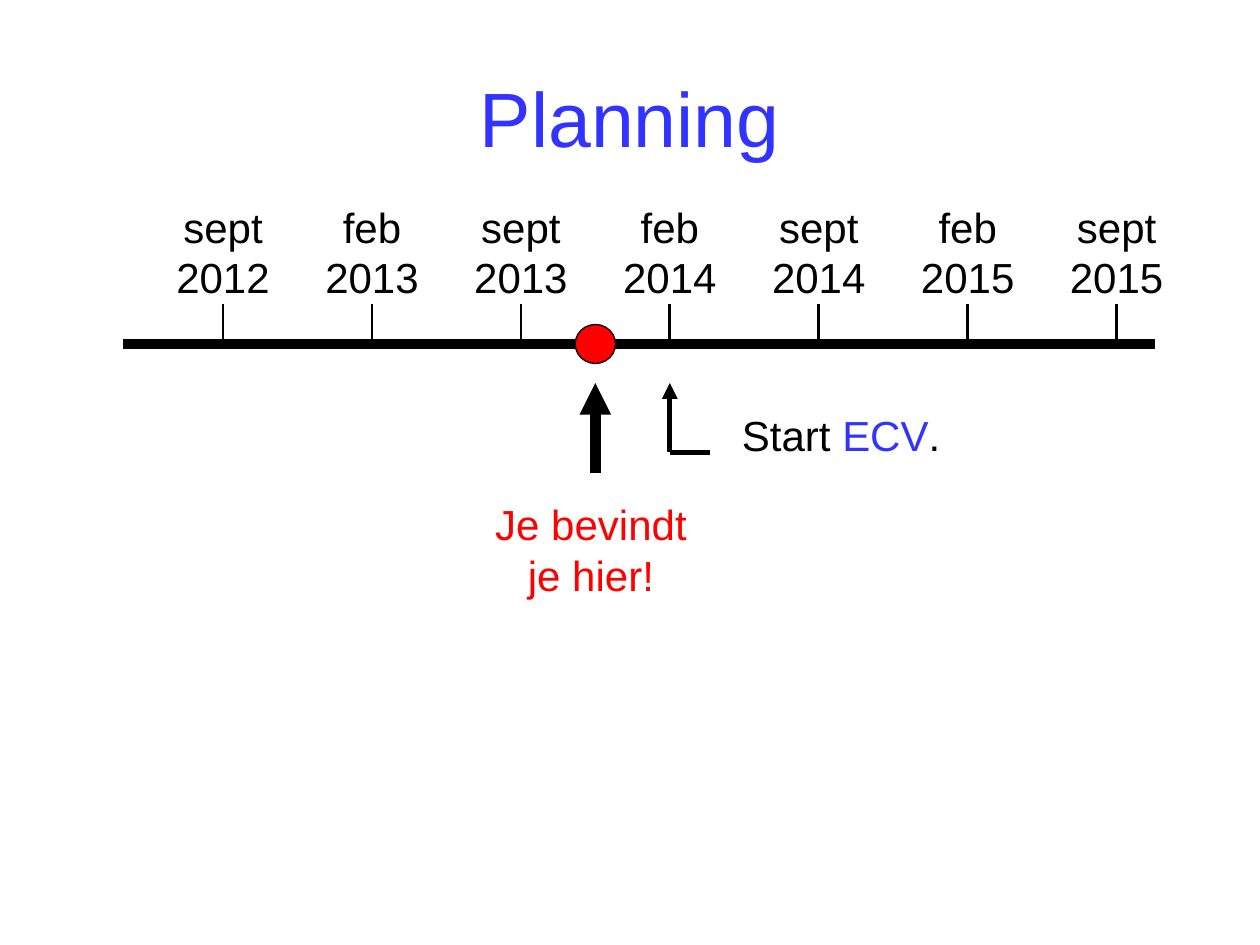
from typing import NamedTuple

from lxml.etree import SubElement
from pptx import Presentation
from pptx.dml.color import RGBColor
from pptx.enum.shapes import MSO_CONNECTOR as Connector, MSO_SHAPE as Shape
from pptx.enum.text import MSO_ANCHOR as Anchor, MSO_AUTO_SIZE as AutoSize, PP_ALIGN as Align
from pptx.oxml.ns import qn
from pptx.util import Inches, Pt

COLORS = {"black": "000000", "blue": "3333FF", "red": "FF0000", "white": "FFFFFF"}
FONT = "Arial"

# Timeline grid: one column per half year
FIRST_COLUMN, COLUMN_WIDTH = 1.77, 1.182
AXIS_Y, TICK_TOP, ARROW_TIP = 2.73, 2.41, 3.04
LABEL_TOP, LABEL_WIDTH, LABEL_HEIGHT = 1.55, 0.95, 0.91


class Span(NamedTuple):
    text: str
    color: str = "black"


class Line(NamedTuple):
    start: tuple[float, float]
    end: tuple[float, float]
    width: float
    arrow: bool = False


MONTHS = ["sept\v2012", "feb\v2013", "sept\v2013", "feb\v2014",
          "sept\v2014", "feb\v2015", "sept\v2015"]


def column_x(column: float) -> float:
    return FIRST_COLUMN + column * COLUMN_WIDTH


def rgb(name: str) -> RGBColor:
    return RGBColor.from_string(COLORS[name])


def write(frame, *spans: Span, size: float = 24, align: Align = Align.CENTER) -> None:
    para = frame.paragraphs[0]
    para.alignment = align
    for text, color in spans:
        for index, piece in enumerate(text.split("\v")):
            if index:
                para.add_line_break()
            span = para.add_run()
            span.text = piece
            span.font.name, span.font.size = FONT, Pt(size)
            span.font.color.rgb = rgb(color)


def add_text(shapes, left: float, top: float, width: float, height: float,
             *spans: Span, wrap: bool = True, align: Align = Align.CENTER) -> None:
    box = shapes.add_textbox(*map(Inches, (left, top, width, height)))
    box.text_frame.word_wrap = wrap
    box.text_frame.auto_size = AutoSize.SHAPE_TO_FIT_TEXT
    write(box.text_frame, *spans, align=align)


def add_line(shapes, line: Line) -> None:
    connector = shapes.add_connector(Connector.STRAIGHT, *map(Inches, line.start + line.end))
    connector.line.color.rgb = rgb("black")
    connector.line.width = Pt(line.width)
    if line.arrow:
        SubElement(connector.line._get_or_add_ln(), qn("a:tailEnd"), type="triangle")
    SubElement(connector._element.spPr, qn("a:effectLst"))


def add_dot(shapes, x: float, y: float, width: float, height: float) -> None:
    dot = shapes.add_shape(Shape.OVAL, *map(Inches, (x - width / 2, y - height / 2, width, height)))
    dot.shadow.inherit = False
    dot.fill.solid()
    dot.fill.fore_color.rgb = rgb("red")
    dot.line.color.rgb = rgb("black")
    dot.line.width = Pt(0.75)


def main() -> None:
    deck = Presentation()
    deck.slide_width, deck.slide_height = Inches(10), Inches(7.5)
    page = deck.slides.add_slide(deck.slide_layouts[5])
    page.background.fill.solid()
    page.background.fill.fore_color.rgb = rgb("white")

    # Title
    title = page.shapes.title
    title.left, title.top, title.width, title.height = map(Inches, (0.5, 0.3, 9, 1.25))
    title.text_frame.vertical_anchor = Anchor.MIDDLE
    write(title.text_frame, Span("Planning", "blue"), size=44)

    # Axis with ticks and dates
    add_line(page.shapes, Line((0.98, AXIS_Y), (9.17, AXIS_Y), 6))
    for column in range(len(MONTHS)):
        x = column_x(column)
        add_line(page.shapes, Line((x, AXIS_Y), (x, TICK_TOP), 1.5))
    for column, month in enumerate(MONTHS):
        add_text(page.shapes, column_x(column) - LABEL_WIDTH / 2, LABEL_TOP,
                 LABEL_WIDTH, LABEL_HEIGHT, Span(month), wrap=False)

    # Current position, halfway between two dates
    here = page.shapes.add_group_shape().shapes
    here_x = column_x(2.5)
    add_line(here, Line((here_x, 3.75), (here_x, ARROW_TIP), 6, arrow=True))
    add_dot(here, here_x, AXIS_Y, 0.32, 0.31)
    add_text(here, 3.78, 3.91, 1.82, 0.9, Span("Je bevindt je hier!", "red"))

    # Start of the course
    start = page.shapes.add_group_shape().shapes
    start_x, elbow_y = column_x(3), 3.59
    add_line(start, Line((start_x, elbow_y), (start_x, ARROW_TIP), 3, arrow=True))
    add_line(start, Line((start_x, elbow_y), (start_x + 0.32, elbow_y), 3))
    add_text(start, 5.79, 3.2, 3.64, 0.5, Span("Start "), Span("ECV", "blue"), Span("."),
             align=Align.LEFT)

    deck.save("out.pptx")


if __name__ == "__main__":
    main()
